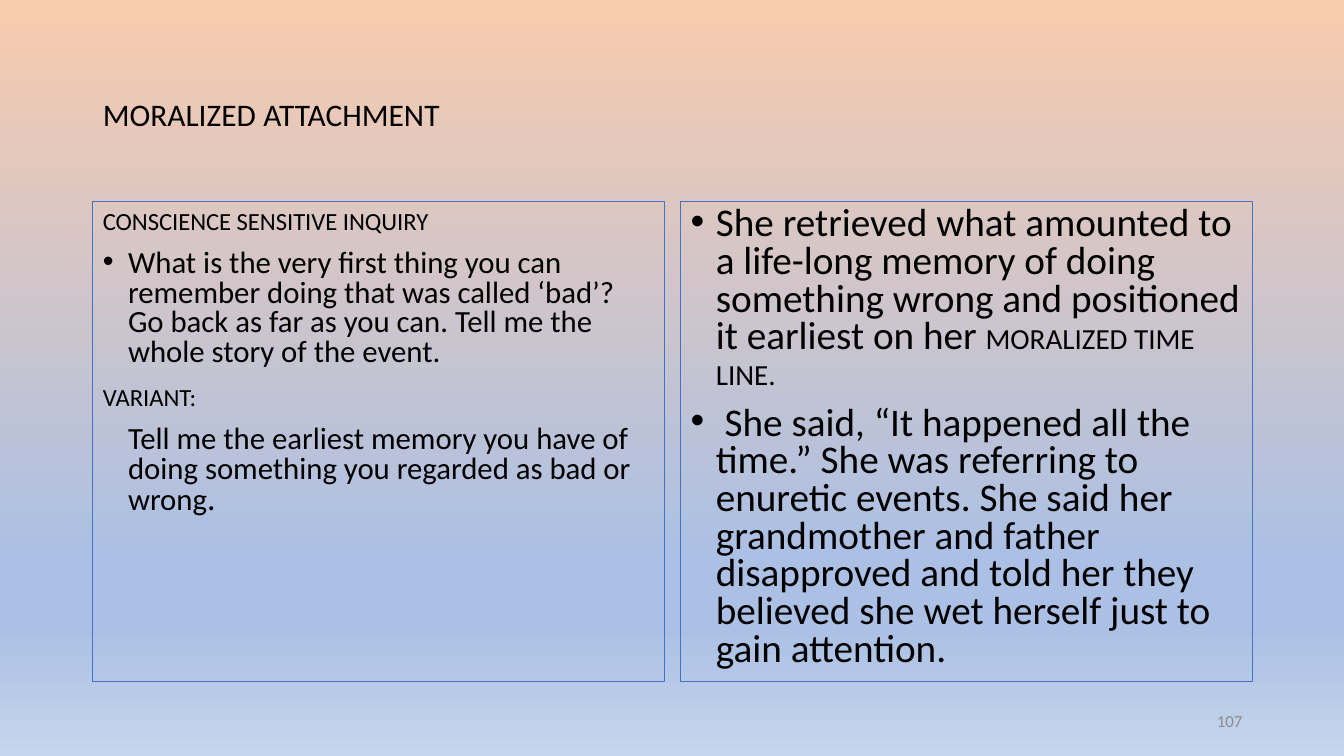
import pptx
import pptx.dml.color
import pptx.enum.text
import pptx.oxml
import pptx.oxml.ns
import pptx.util
from pptx.util import Inches

ALIGN = pptx.enum.text.PP_ALIGN
ANCHOR = pptx.enum.text.MSO_ANCHOR
qn = pptx.oxml.ns.qn


def color(value):
    return pptx.dml.color.RGBColor.from_string(value)


class SlideBuilder:
    font = "Calibri"
    ink = "000000"
    outline = "4472C4"

    def __init__(self, presentation):
        self.slide = presentation.slides.add_slide(presentation.slide_layouts[3])

    def background(self, stops):
        fill = self.slide.background.fill
        fill.gradient()
        fill.gradient_angle = 270
        stop_list = next(self.slide.element.iter(qn("a:gsLst")))
        for stop in list(stop_list):
            stop_list.remove(stop)
        for position, value in stops:
            stop = pptx.oxml.parse_xml(
                f'<a:gs {pptx.oxml.ns.nsdecls("a")} pos="{position * 1000}">'
                f'<a:srgbClr val="{value}"/></a:gs>')
            stop_list.append(stop)

    def place(self, shape, left, top, width, height):
        shape.left, shape.top = Inches(left), Inches(top)
        shape.width, shape.height = Inches(width), Inches(height)

    def style_run(self, run, size, small_caps=False, ink=None):
        run.font.name = self.font
        run.font.size = pptx.util.Pt(size)
        run.font.color.rgb = color(ink or self.ink)
        if small_caps:
            run.font._element.set("cap", "small")

    def title(self, text, box, size):
        shape = self.slide.shapes.title
        self.place(shape, *box)
        frame = shape.text_frame
        frame.text = text
        frame.auto_size = pptx.enum.text.MSO_AUTO_SIZE.NONE
        frame.vertical_anchor = ANCHOR.MIDDLE
        paragraph = frame.paragraphs[0]
        paragraph.alignment = ALIGN.LEFT
        paragraph.line_spacing = 0.9
        self.style_run(paragraph.runs[0], size, small_caps=True)

    def body(self, index, box, items):
        shape = self.slide.placeholders[index]
        self.place(shape, *box)
        shape.line.color.rgb = color(self.outline)
        shape.line.width = pptx.util.Pt(0.75)
        frame = shape.text_frame
        frame.auto_size = pptx.enum.text.MSO_AUTO_SIZE.NONE
        for number, (bulleted, runs) in enumerate(items):
            paragraph = frame.add_paragraph() if number else frame.paragraphs[0]
            self.format_item(paragraph, bulleted)
            for text, size, small_caps in runs:
                run = paragraph.add_run()
                run.text = text
                self.style_run(run, size, small_caps)

    def format_item(self, paragraph, bulleted):
        paragraph.line_spacing = 0.8
        paragraph.space_before = pptx.util.Pt(10)
        properties = paragraph._p.get_or_add_pPr()
        properties.set("marL", str(Inches(0.25)))
        properties.set("indent", str(-Inches(0.25)))
        namespace = pptx.oxml.ns.nsdecls("a")
        if bulleted:
            properties.append(pptx.oxml.parse_xml(f'<a:buFont {namespace} typeface="Arial"/>'))
            properties.append(pptx.oxml.parse_xml(f'<a:buChar {namespace} char="•"/>'))
        else:
            properties.append(pptx.oxml.parse_xml(f'<a:buNone {namespace}/>'))

    def page_number(self, text, box):
        shape = self.slide.shapes.add_textbox(*map(Inches, box))
        frame = shape.text_frame
        frame.word_wrap = True
        frame.vertical_anchor = ANCHOR.MIDDLE
        frame.text = text
        frame.paragraphs[0].alignment = ALIGN.RIGHT
        self.style_run(frame.paragraphs[0].runs[0], 12, ink="8C8C8C")


INQUIRY = [
    (False, [("conscience sensitive inquiry", 22, True)]),
    (True, [("What is the very first thing you can remember doing that was called ‘bad’? "
             "Go back as far as you can. Tell me the whole story of the event.", 22, False)]),
    (False, [("variant:", 22, True)]),
    (False, [("\tTell me the earliest memory you have of doing something you regarded "
              "as bad or wrong", 22, False), (".", 24, False)]),
]
RESPONSE = [
    (True, [("She retrieved what amounted to a life-long memory of doing something wrong "
             "and positioned it earliest on her ", 28, False),
            ("moralized time line.", 26, True)]),
    (True, [(" She said, “It happened all the time.” She was referring to enuretic events. "
             "She said her grandmother and father disapproved and told her they believed "
             "she wet herself just to gain attention.", 28, False)]),
]


def main():
    presentation = pptx.Presentation()
    presentation.slide_width = Inches(13.33)
    presentation.slide_height = Inches(7.5)
    builder = SlideBuilder(presentation)
    builder.background([(0, "F8CBAD"), (74, "ABC0E4"), (83, "ABC0E4"), (100, "C7D5ED")])
    builder.title("moralized attachment", (0.92, 0.4, 11.5, 1.45), 28)
    for column, items in enumerate((INQUIRY, RESPONSE)):
        builder.body(column + 1, (0.92 + column * 5.83, 2, 5.67, 4.76), items)
    builder.page_number("107", (9.42, 6.95, 3, 0.4))
    presentation.save("out.pptx")


if __name__ == "__main__":
    main()
